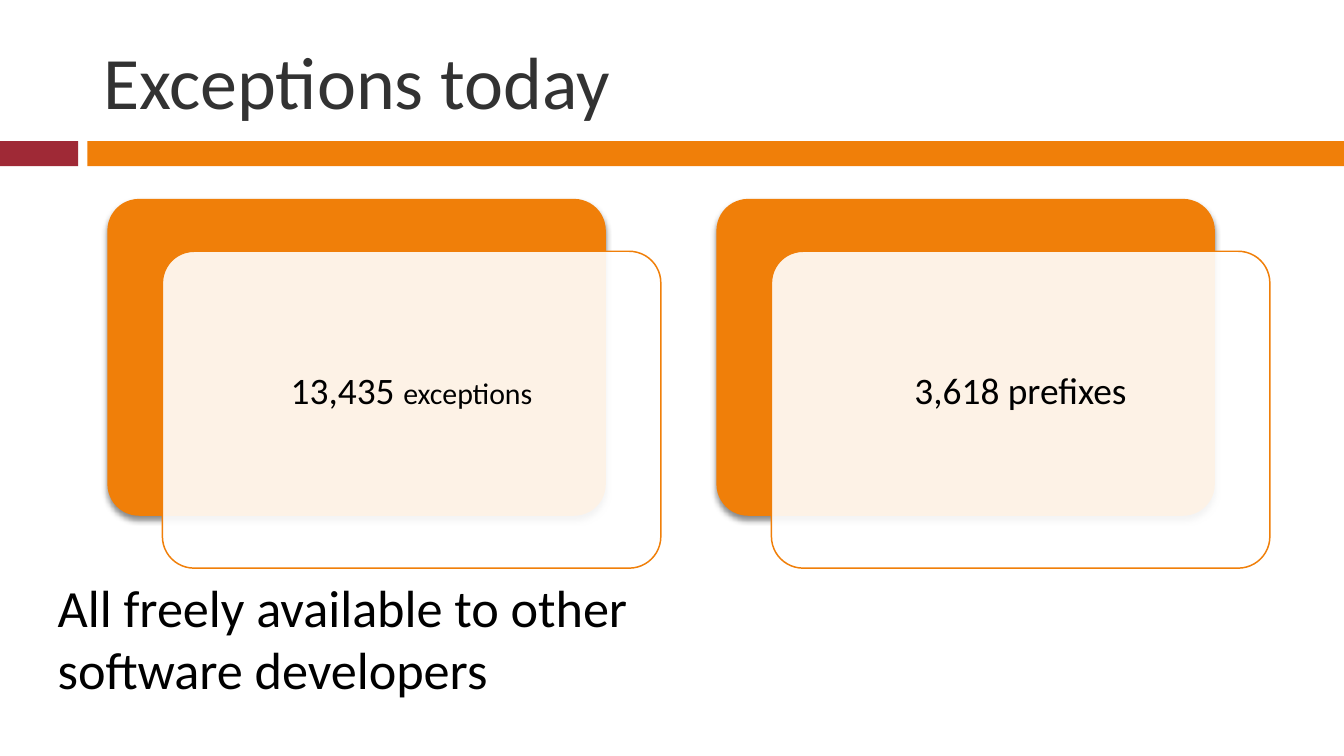
from lxml import etree
from pptx import Presentation
from pptx import util as u
from pptx.dml.color import RGBColor
from pptx.enum import shapes, text
from pptx.oxml.ns import qn

ORANGE = RGBColor(0xF0, 0x7F, 0x09)
CRIMSON = RGBColor(0x9F, 0x29, 0x36)
CHARCOAL = RGBColor(0x32, 0x32, 0x32)
BLACK = RGBColor(0, 0, 0)
WHITE = RGBColor(0xFF, 0xFF, 0xFF)
FONT = "Calibri"


def add_run(p, words, size, color=BLACK):
    r = p.add_run()
    r.text = words
    r.font.name = FONT
    r.font.size = u.Pt(size)
    r.font.color.rgb = color


def add_box(s, kind, x, y, w, h, fill):
    sp = s.shapes.add_shape(kind, u.Cm(x), u.Cm(y), u.Cm(w), u.Cm(h))
    sp.shadow.inherit = False
    sp.fill.solid()
    sp.fill.fore_color.rgb = fill
    sp.line.fill.background()
    return sp


def add_text(s, x, y, w, h, words, size, color, anchor):
    tf = s.shapes.add_textbox(u.Cm(x), u.Cm(y), u.Cm(w), u.Cm(h)).text_frame
    tf.word_wrap = True
    tf.vertical_anchor = anchor
    add_run(tf.paragraphs[0], words, size, color)


def add_alpha(color, percent):
    etree.SubElement(color, qn("a:alpha"), val=str(percent * 1000))


def add_drop_shadow(sp):
    effects = sp._element.spPr.find(qn("a:effectLst"))
    shadow = etree.SubElement(
        effects, qn("a:outerShdw"), blurRad=str(u.Pt(3)), dist=str(u.Pt(2.4)),
        dir="5400000", rotWithShape="0")
    add_alpha(etree.SubElement(shadow, qn("a:srgbClr"), val=str(BLACK)), 45)


def add_band(s, x, y, w, h):
    tab, gap = 1.48, 0.17
    rect = shapes.MSO_SHAPE.RECTANGLE
    add_box(s, rect, x, y, tab, h, CRIMSON)
    add_box(s, rect, x + tab + gap, y, w - tab - gap, h, ORANGE)


def add_card(s, x, y, w, h, runs):
    dx, dy = 1.04, 0.99
    rounded = shapes.MSO_SHAPE.ROUNDED_RECTANGLE
    back = add_box(s, rounded, x, y, w - dx, h - dy, ORANGE)
    front = add_box(s, rounded, x + dx, y + dy, w - dx, h - dy, WHITE)
    for sp in (back, front):
        sp.adjustments[0] = 0.1
    add_drop_shadow(back)
    add_alpha(front._element.spPr.find(qn("a:solidFill"))[0], 90)
    front.line.color.rgb = ORANGE
    front.line.width = u.Pt(0.79)

    tf = front.text_frame
    tf.word_wrap = True
    tf.vertical_anchor = text.MSO_ANCHOR.MIDDLE
    tf.margin_left = tf.margin_right = tf.margin_top = u.Cm(0.2)
    tf.margin_bottom = u.Cm(0.86)
    p = tf.paragraphs[0]
    p.alignment = text.PP_ALIGN.CENTER
    p.line_spacing = 0.9
    for words, size in runs:
        add_run(p, words, size)


def main():
    prs = Presentation()
    prs.slide_width, prs.slide_height = u.Cm(25.4), u.Cm(14.29)
    s = prs.slides.add_slide(prs.slide_layouts[6])

    add_band(s, 0, 2.67, 25.4, 0.47)
    add_text(s, 1.7, 0.48, 22.66, 2.06, "Exceptions today", 39.6, CHARCOAL,
             text.MSO_ANCHOR.MIDDLE)
    cards = [
        [("13,435 ", 20), ("exceptions", 16)],
        [("3,618 prefixes", 20)],
    ]
    for i, runs in enumerate(cards):
        add_card(s, 2.03 + i * 11.51, 3.76, 10.46, 6.98, runs)
    add_text(s, 0.84, 10.74, 11.63, 2.64,
             "All freely available to other software developers", 28, BLACK,
             text.MSO_ANCHOR.TOP)

    prs.save("out.pptx")


if __name__ == "__main__":
    main()
